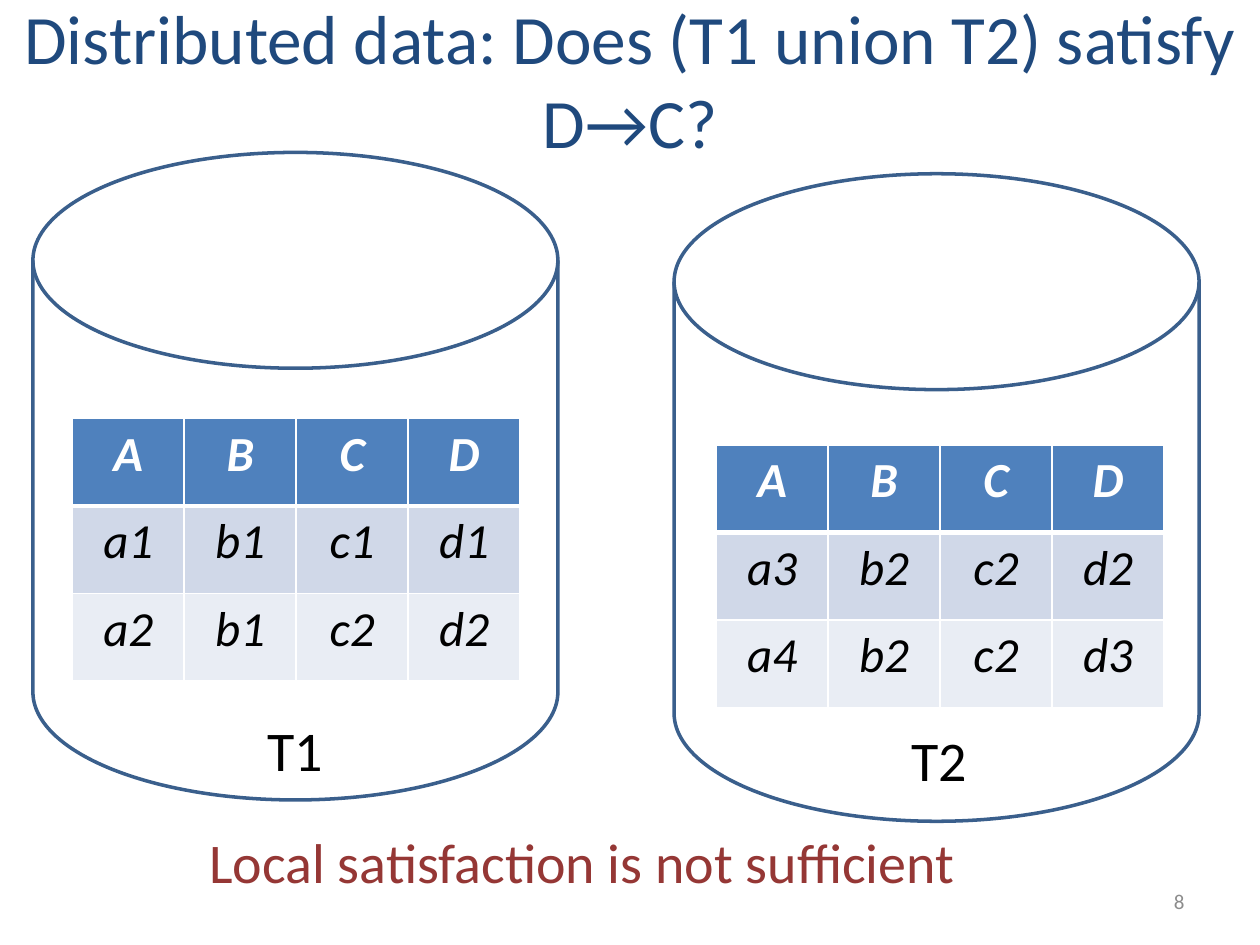
from dataclasses import dataclass

from lxml import etree
from pptx import Presentation
from pptx.dml.color import RGBColor
from pptx.enum.shapes import MSO_SHAPE
from pptx.enum.text import MSO_ANCHOR, PP_ALIGN
from pptx.oxml.ns import qn
from pptx.util import Pt

DISK = MSO_SHAPE.FLOWCHART_MAGNETIC_DISK
TOP, MIDDLE = MSO_ANCHOR.TOP, MSO_ANCHOR.MIDDLE
LEFT, CENTER, RIGHT = PP_ALIGN.LEFT, PP_ALIGN.CENTER, PP_ALIGN.RIGHT


@dataclass(frozen=True)
class Theme:
    """Colours, type sizes and font of the slide."""
    font: str = "Calibri"
    white: str = "FFFFFF"
    black: str = "000000"
    title: str = "1F497D"
    edge: str = "3A5F8C"
    head: str = "4F81BD"
    bands: tuple = ("D0D8E8", "E9EDF4")
    note: str = "953735"
    gray: str = "8C8C8C"
    big: float = 39.6
    mid: float = 32
    cell: float = 28
    small: float = 12


THEME = Theme()


def paint(fill, color):
    """Fill with one solid colour."""
    fill.solid()
    fill.fore_color.rgb = RGBColor.from_string(color)


def write(frame, text, size, color, align, bold=False, italic=False):
    """Write one run in the first paragraph of a frame."""
    para = frame.paragraphs[0]
    para.alignment = align
    run = para.add_run()
    run.text = text
    font = run.font
    font.name, font.size = THEME.font, Pt(size)
    font.bold, font.italic = bold, italic
    font.color.rgb = RGBColor.from_string(color)


def add_text(slide, box, text, size, color, align=CENTER, anchor=TOP):
    """Place a wrapped line of text in a box."""
    frame = slide.shapes.add_textbox(*map(Pt, box)).text_frame
    frame.word_wrap = True
    frame.vertical_anchor = anchor
    write(frame, text, size, color, align)


def add_edge(cell, side, width):
    """Draw one white border of a cell."""
    props = cell._tc.get_or_add_tcPr()
    line = etree.SubElement(props, qn(f"a:ln{side}"), w=str(Pt(width)))
    fill = etree.SubElement(line, qn("a:solidFill"))
    etree.SubElement(fill, qn("a:srgbClr"), val=THEME.white)


def add_grid(slide, box, rows):
    """Place a table with a dark head and banded rows in a box."""
    left, top, width, height = box
    table = slide.shapes.add_table(
        len(rows), len(rows[0]), Pt(left), Pt(top), Pt(width), Pt(height)
    ).table
    for r, row in enumerate(rows):
        table.rows[r].height = Pt(height / len(rows))
        head = r == 0
        back = THEME.head if head else THEME.bands[(r - 1) % 2]
        color = THEME.white if head else THEME.black
        for c, text in enumerate(row):
            cell = table.cell(r, c)
            for side in "LRTB":
                thick = (r, side) in ((0, "B"), (1, "T"))
                add_edge(cell, side, 3 if thick else 1)
            paint(cell.fill, back)
            write(cell.text_frame, text, THEME.cell, color, CENTER, head, True)


def add_store(slide, box, grid, label, name, rows):
    """Place a disk with its table and name, offset from the box corner."""
    left, top = box[:2]
    disk = slide.shapes.add_shape(DISK, *map(Pt, box))
    disk.shadow.inherit = False
    paint(disk.fill, THEME.white)
    paint(disk.line.fill, THEME.edge)
    disk.line.width = Pt(2)
    add_grid(slide, (left + grid[0], top + grid[1], 256, 150), rows)
    place = (left + label[0], top + label[1], 113, 46)
    add_text(slide, place, name, THEME.mid, THEME.black)


def main():
    """Build and save the slide."""
    deck = Presentation()
    deck.slide_width, deck.slide_height = Pt(720), Pt(540)
    slide = deck.slides.add_slide(deck.slide_layouts[6])
    head = ("A", "B", "C", "D")
    add_store(slide, (385.2, 99.3, 300, 370), (24, 155), (95, 312), "T2",
              (head, ("a3", "b2", "c2", "d2"), ("a4", "b2", "c2", "d3")))
    add_store(slide, (18.8, 87.1, 300, 370), (22.5, 152), (93.5, 318), "T1",
              (head, ("a1", "b1", "c1", "d1"), ("a2", "b1", "c2", "d2")))
    add_text(slide, (0, 0, 720, 90),
             "Distributed data: Does (T1 union T2) satisfy D→C?",
             THEME.big, THEME.title, anchor=MIDDLE)
    add_text(slide, (516, 500.5, 168, 28.75), "8",
             THEME.small, THEME.gray, RIGHT, MIDDLE)
    add_text(slide, (112.5, 469.5, 514, 46),
             "Local satisfaction is not sufficient",
             THEME.mid, THEME.note, LEFT)
    deck.save("out.pptx")


if __name__ == "__main__":
    main()
